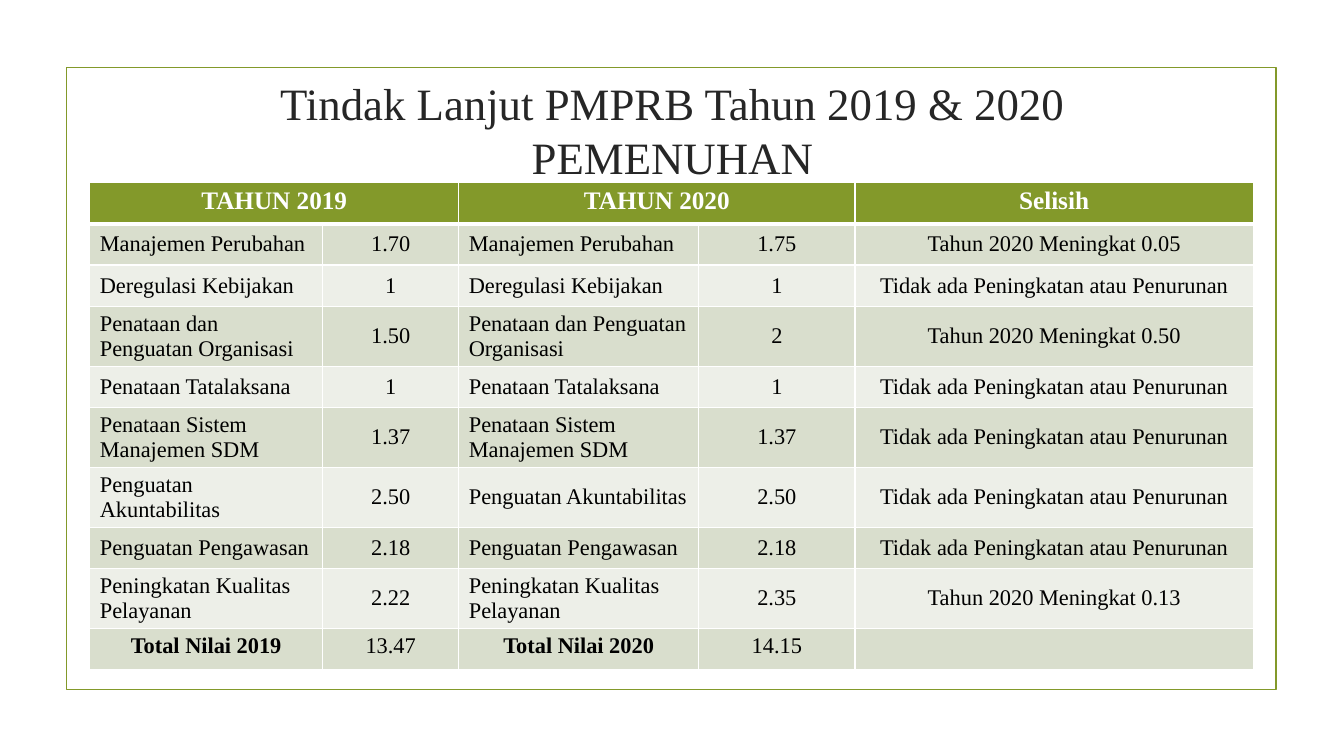
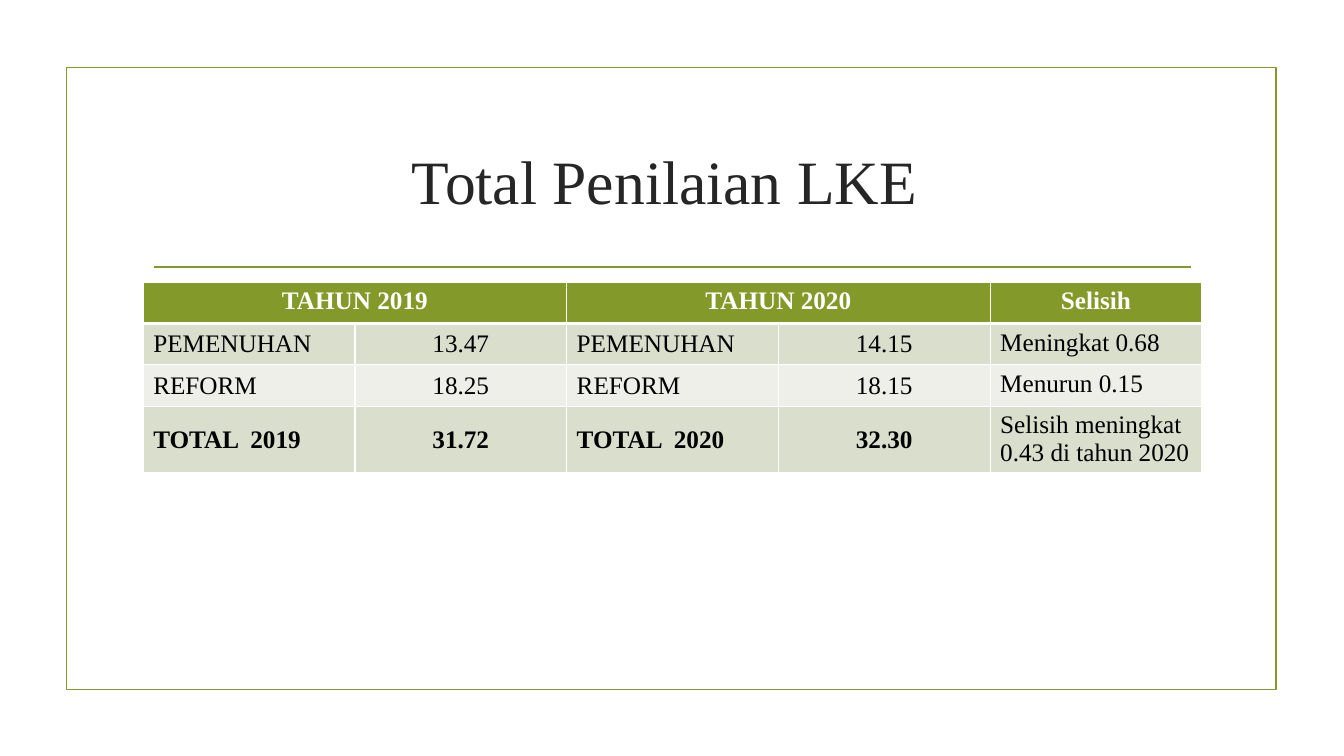
from dataclasses import dataclass

from lxml.etree import Element, SubElement
from pptx import Presentation
from pptx.dml.color import RGBColor
from pptx.enum.shapes import MSO_CONNECTOR, MSO_SHAPE
from pptx.enum.text import MSO_ANCHOR, PP_ALIGN
from pptx.oxml.ns import qn
from pptx.util import Inches, Pt


@dataclass(frozen=True)
class Theme:
    font: str = "Times New Roman"
    olive: RGBColor = RGBColor(0x83, 0x99, 0x2A)
    band_dark: RGBColor = RGBColor(0xD9, 0xDE, 0xCD)
    band_light: RGBColor = RGBColor(0xED, 0xEF, 0xE8)
    title_ink: RGBColor = RGBColor(0x26, 0x26, 0x26)
    body_ink: RGBColor = RGBColor(0, 0, 0)
    white: RGBColor = RGBColor(0xFF, 0xFF, 0xFF)
    title_size: Pt = Pt(44)
    long_title_size: Pt = Pt(32)
    header_size: Pt = Pt(18)
    dense_size: Pt = Pt(16)
    line_width: Pt = Pt(1.25)
    header_border: Pt = Pt(3)


HEADERS = {0: "TAHUN 2019", 2: "TAHUN 2020", 4: "Selisih"}
LEFT, CENTER = PP_ALIGN.LEFT, PP_ALIGN.CENTER
TOP, MIDDLE = MSO_ANCHOR.TOP, MSO_ANCHOR.MIDDLE
ROW_HEIGHT = 0.41


class Deck:
    def __init__(self, theme):
        self.theme = theme
        self.presentation = Presentation()
        self.presentation.slide_width = Inches(13.33)
        self.presentation.slide_height = Inches(7.5)
        self.slide = None

    def add_slide(self):
        """Start a blank slide with the olive frame."""
        self.slide = self.presentation.slides.add_slide(self.presentation.slide_layouts[6])
        frame = self.slide.shapes.add_shape(
            MSO_SHAPE.RECTANGLE, Inches(0.66), Inches(0.67), Inches(12), Inches(6.17))
        frame.shadow.inherit = False
        frame.fill.background()
        frame.line.color.rgb = self.theme.olive
        frame.line.width = self.theme.line_width

    def rule(self):
        y = Inches(2.65)
        rule = self.slide.shapes.add_connector(
            MSO_CONNECTOR.STRAIGHT, Inches(1.53), y, Inches(11.81), y)
        rule.line.color.rgb = self.theme.olive
        rule.line.width = self.theme.line_width
        SubElement(rule._element.spPr, qn("a:effectLst"))

    def style_text(self, paragraph, size, color, bold=False, align=LEFT):
        paragraph.alignment = align
        for run in paragraph.runs:
            run.font.name = self.theme.font
            run.font.size = size
            run.font.bold = bold
            run.font.color.rgb = color

    def title(self, text, top, size, anchor):
        box = self.slide.shapes.add_textbox(
            Inches(1.42), Inches(top), Inches(10.5), Inches(1.43))
        frame = box.text_frame
        frame.word_wrap = True
        frame.vertical_anchor = anchor
        paragraph = frame.paragraphs[0]
        paragraph.text = text
        self.style_text(paragraph, size, self.theme.title_ink, align=CENTER)

    def cell(self, cell, text, fill, size, color, bold=False, align=LEFT, anchor=TOP):
        cell.fill.solid()
        cell.fill.fore_color.rgb = fill
        cell.vertical_anchor = anchor
        # Tight margins keep the two-line rows low.
        cell.margin_top = Inches(0.05 if anchor == TOP else 0.03)
        cell.margin_bottom = Inches(0.01 if anchor == TOP else 0.03)
        if text:
            cell.text_frame.text = text
            self.style_text(cell.text_frame.paragraphs[0], size, color, bold, align)

    def underline(self, cell):
        """Give a header cell its thick lower border."""
        border = Element(qn("a:lnB"), w=str(self.theme.header_border))
        fill = SubElement(border, qn("a:solidFill"))
        SubElement(fill, qn("a:srgbClr"), val=str(self.theme.white))
        cell._tc.get_or_add_tcPr().insert(0, border)

    def comparison(self, left, top, widths, rows, size, total_style, difference_style):
        """Draw the 2019/2020 table; the last row holds the totals.

        total_style(column) gives the cell options of the totals, and
        difference_style those of the last column.
        """
        theme = self.theme
        row_count = len(rows) + 1
        table = self.slide.shapes.add_table(
            row_count, len(widths), Inches(left), Inches(top),
            Inches(sum(widths)), Inches(ROW_HEIGHT * row_count)).table
        for column, width in zip(table.columns, widths):
            column.width = Inches(width)
        for row in table.rows:
            row.height = Inches(ROW_HEIGHT)

        for start in (0, 2):
            table.cell(0, start).merge(table.cell(0, start + 1))
        for column in range(len(widths)):
            header = table.cell(0, column)
            self.cell(header, HEADERS.get(column), theme.olive, theme.header_size,
                      theme.white, bold=True, align=CENTER)
            self.underline(header)

        for r, values in enumerate(rows, start=1):
            fill = theme.band_dark if r % 2 else theme.band_light
            for c, value in enumerate(values):
                style = {"align": CENTER if c % 2 else LEFT, "anchor": MIDDLE}
                if c == 4:
                    style = difference_style
                elif r == len(rows):
                    style.update(total_style(c))
                self.cell(table.cell(r, c), value, fill, size, theme.body_ink, **style)


def both_years(label, score_2019, score_2020, difference):
    return label, score_2019, label, score_2020, difference


def fulfilment_slide(deck):
    unchanged = "Tidak ada Peningkatan atau Penurunan"
    increased = "Tahun 2020 Meningkat "
    aspects = [
        ("Manajemen Perubahan", "1.70", "1.75", increased + "0.05"),
        ("Deregulasi Kebijakan", "1", "1", unchanged),
        ("Penataan dan Penguatan Organisasi", "1.50", "2", increased + "0.50"),
        ("Penataan Tatalaksana", "1", "1", unchanged),
        ("Penataan Sistem Manajemen SDM", "1.37", "1.37", unchanged),
        ("Penguatan Akuntabilitas", "2.50", "2.50", unchanged),
        ("Penguatan Pengawasan", "2.18", "2.18", unchanged),
        ("Peningkatan Kualitas Pelayanan", "2.22", "2.35", increased + "0.13"),
    ]
    totals = ("Total Nilai 2019", "13.47", "Total Nilai 2020", "14.15", "")
    deck.add_slide()
    deck.title("Tindak Lanjut PMPRB Tahun 2019 & 2020\vPEMENUHAN", 0.7,
               deck.theme.long_title_size, TOP)
    deck.comparison(
        0.89, 1.81, [2.31, 1.35, 2.38, 1.55, 3.95],
        [both_years(*aspect) for aspect in aspects] + [totals], deck.theme.dense_size,
        total_style=lambda column: {"bold": column % 2 == 0, "align": CENTER, "anchor": TOP},
        difference_style={"align": CENTER, "anchor": MIDDLE})


def total_slide(deck):
    rows = [
        both_years("PEMENUHAN", "13.47", "14.15", "Meningkat 0.68"),
        both_years("REFORM", "18.25", "18.15", "Menurun 0.15"),
        ("TOTAL  2019", "31.72", "TOTAL  2020", "32.30", "Selisih meningkat 0.43 di tahun 2020"),
    ]
    deck.add_slide()
    deck.rule()
    deck.title("Total Penilaian LKE ", 1.07, deck.theme.title_size, MIDDLE)
    deck.comparison(
        1.42, 2.8, [2.1] * 5, rows, deck.theme.header_size,
        total_style=lambda column: {"bold": True},
        difference_style={"align": LEFT, "anchor": TOP})


def main():
    deck = Deck(Theme())
    fulfilment_slide(deck)
    total_slide(deck)
    deck.presentation.save("out.pptx")


if __name__ == "__main__":
    main()
